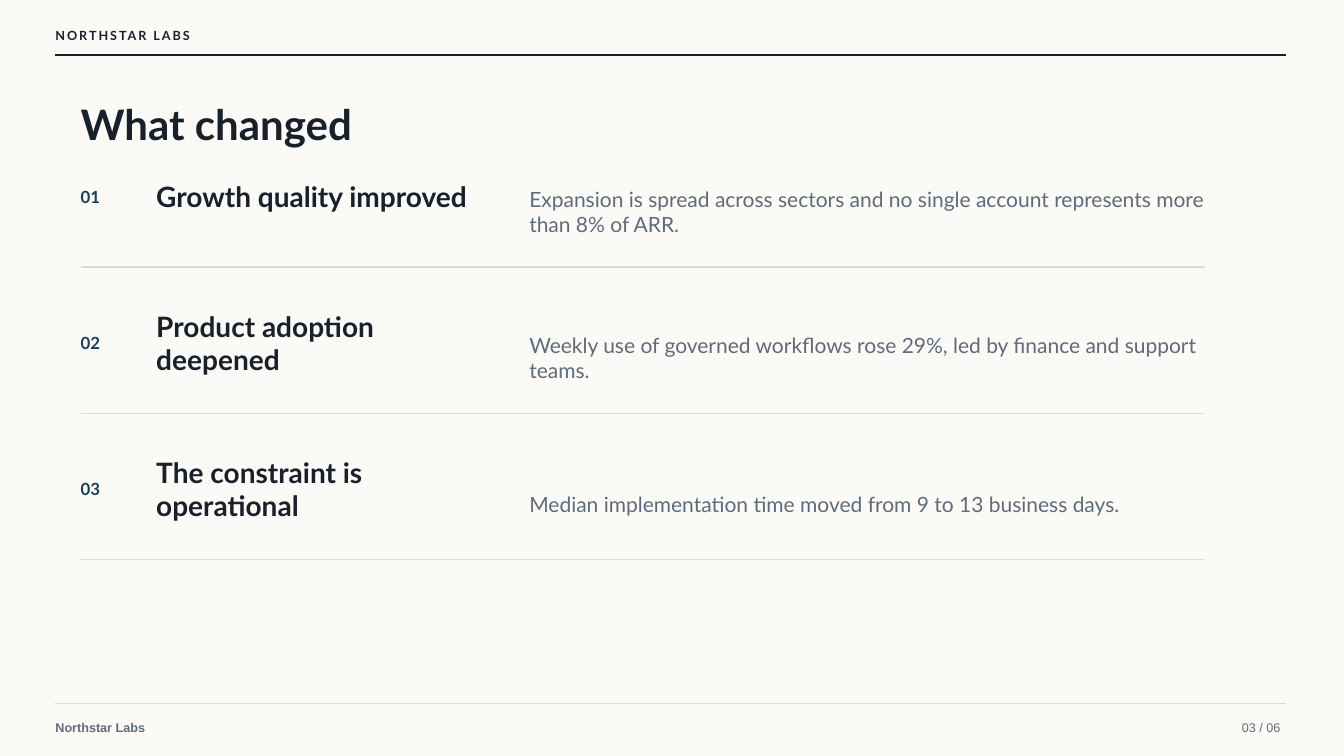
from lxml import etree
from pptx import Presentation
from pptx import util as u
from pptx.dml.color import RGBColor
from pptx.enum import shapes, text
from pptx.oxml.ns import qn

EMU_PER_PX = 9144  # 100 px to the inch

INK, NAVY, GREY, SLATE = "17202B", "163F59", "5F6C7A", "5E6B7B"
RULE, PAPER = "D7DCE1", "FBFAF6"

CHANGES = [
    ("Growth quality improved",
     "Expansion is spread across sectors and no single account represents more than 8% of ARR."),
    ("Product adoption deepened",
     "Weekly use of governed workflows rose 29%, led by finance and support teams."),
    ("The constraint is operational",
     "Median implementation time moved from 9 to 13 business days."),
]
FIRST_ROW, ROW_STEP = 175, 145


def px(length):
    return u.Emu(length * EMU_PER_PX)


def rgb(value):
    return RGBColor.from_string(value)


def write(shape, words, size, color=INK, font="Lato", bold=False, align="LEFT", tracking=None):
    """Fill a shape with one formatted paragraph, without insets."""
    frame = shape.text_frame
    frame.word_wrap = True
    frame.auto_size = text.MSO_AUTO_SIZE.NONE
    frame.vertical_anchor = text.MSO_ANCHOR.MIDDLE
    frame.margin_left = frame.margin_right = frame.margin_top = frame.margin_bottom = 0
    paragraph = frame.paragraphs[0]
    paragraph.alignment = text.PP_ALIGN[align]
    run = paragraph.add_run()
    run.text = words
    run.font.name, run.font.size, run.font.bold = font, u.Pt(size), bold
    run.font.color.rgb = rgb(color)
    if tracking:
        run.font._element.set("spc", str(tracking))


class ReportSlide:
    def __init__(self, deck):
        self.slide = deck.slides.add_slide(deck.slide_layouts.get_by_name("Title Only"))
        self.slide.background.fill.solid()
        self.slide.background.fill.fore_color.rgb = rgb(PAPER)

    def title(self, words, left, top, width, height, **style):
        heading = self.slide.shapes.title
        heading.left, heading.top = px(left), px(top)
        heading.width, heading.height = px(width), px(height)
        write(heading, words, **style)

    def label(self, words, left, top, width, height, **style):
        box = self.slide.shapes.add_textbox(px(left), px(top), px(width), px(height))
        write(box, words, **style)

    def rule(self, left, right, y, color=RULE, weight=1):
        line = self.slide.shapes.add_connector(
            shapes.MSO_CONNECTOR.STRAIGHT, px(left), px(y), px(right), px(y))
        line.line.color.rgb = rgb(color)
        line.line.width = u.Pt(weight)
        etree.SubElement(line._element.spPr, qn("a:effectLst"))

    def change(self, number, heading, detail, top):
        self.label(f"{number:02}", 80, top + 5, 50, 30, size=12, color=NAVY, bold=True)
        self.label(heading, 155, top, 340, 40, size=20, bold=True)
        self.label(detail, 525, top, 670, 70, size=15, color=SLATE)
        self.rule(80, 1195, top + 90)


def main():
    deck = Presentation()
    deck.slide_width, deck.slide_height = px(1333), px(750)
    page = ReportSlide(deck)

    page.rule(55, 1275, 55, color=INK, weight=1.4)
    page.label("NORTHSTAR LABS", 55, 25, 400, 20, size=9, bold=True, tracking=140)
    page.label("Northstar Labs", 55, 712, 400, 20, size=9, color=GREY, font="Arial", bold=True)
    page.label("03 / 06", 1180, 712, 90, 20, size=9, color=GREY, font="Arial", align="RIGHT")
    page.rule(55, 1275, 698)

    page.title("What changed", 80, 95, 800, 55, size=30, bold=True)
    for row, (heading, detail) in enumerate(CHANGES):
        page.change(row + 1, heading, detail, FIRST_ROW + row * ROW_STEP)

    deck.save("out.pptx")


if __name__ == "__main__":
    main()
